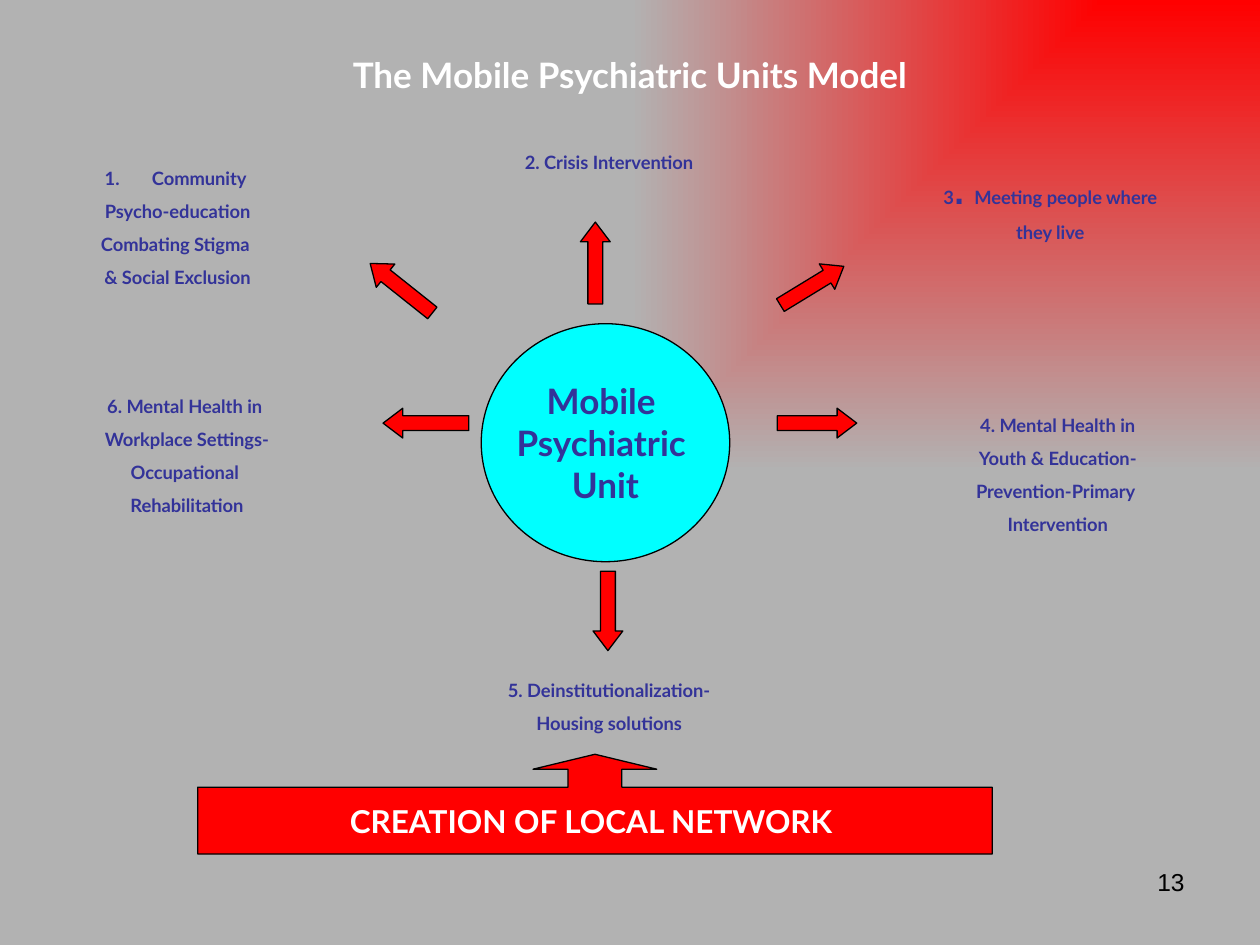
import pptx
import pptx.util
import pptx.dml.color
import pptx.enum.shapes
import pptx.enum.text
import pptx.oxml
import pptx.oxml.ns

Pt = pptx.util.Pt
SHAPES = pptx.enum.shapes.MSO_SHAPE
ALIGN = pptx.enum.text.PP_ALIGN
ANCHOR = pptx.enum.text.MSO_ANCHOR
FIT = pptx.enum.text.MSO_AUTO_SIZE

RED, GREY, CYAN, NAVY = "FF0000", "B2B2B2", "00FFFF", "333399"
WHITE, BLACK = "FFFFFF", "000000"
LABEL = {"name": "Lato", "size": Pt(10.5), "bold": True}
HEADING = {"name": "Lato", "size": Pt(20), "bold": True}
BANNER = {"name": "Lato", "size": Pt(18), "bold": True}
NUMBER = {"name": "Arial", "size": Pt(14), "bold": False}
POINT = {"name": "DejaVu Sans", "size": Pt(16), "bold": True}
INDENT = Pt(27)
ARROW_HEIGHT = 17

# Arrow: left, top, width, rotation. Label: box, wrap, line spacing, lines.
SPOKES = [
    ((206.6, 156.2, 45.4, 218.5), (20.9, 85.7, 161.3, 83.5), True, 1.5,
     ["Community ", "Psycho-education", "Combating Stigma ", "& Social Exclusion"]),
    ((316.8, 141.8, 46.8, 270), (284.4, 82.8, 127.4, 20.2), False, 1,
     ["2. Crisis Intervention"]),
    ((442.8, 154.8, 42.5, 328.6), (524.2, 87.8, 151.9, 55.4), True, 1.5,
     [[("3", LABEL), (". ", POINT), ("Meeting people where", LABEL)], "they live"]),
    ((444.2, 233.3, 45.4, 0), (543.6, 226.8, 121.7, 80.6), False, 1.5,
     ["4. Mental Health in", "Youth & Education-", "Prevention-Primary ", "Intervention"]),
    ((324.7, 340.6, 45.4, 90), (274.3, 378, 147.6, 43.2), False, 1.5,
     ["5. Deinstitutionalization-", "Housing solutions"]),
    ((218.9, 233.3, 49, 180), (0, 216, 213.8, 80.6), True, 1.5,
     ["6. Mental Health in ", "Workplace Settings-", "Occupational ", "Rehabilitation"]),
]


def rgb(value):
    return pptx.dml.color.RGBColor.from_string(value)


def xml(tag, content="", attributes=""):
    namespace = pptx.oxml.ns.nsdecls("a", "p")
    return pptx.oxml.parse_xml(f"<{tag} {namespace} {attributes}>{content}</{tag}>")


def write(frame, lines, style, color, align=ALIGN.CENTER, spacing=None):
    """Fill a frame; a line is a string or a list of (text, style) spans."""
    for index, line in enumerate(lines):
        para = frame.paragraphs[0] if index == 0 else frame.add_paragraph()
        para.alignment = align
        if spacing:
            para.line_spacing = spacing
        for text, values in [(line, style)] if isinstance(line, str) else line:
            span = para.add_run()
            span.text = text
            span.font.color.rgb = rgb(color)
            for name, value in values.items():
                setattr(span.font, name, value)


def add_text(parent, box, lines, style, color, wrap=True, **options):
    frame = parent.add_textbox(*map(Pt, box)).text_frame
    frame.word_wrap = wrap
    write(frame, lines, style, color, **options)
    return frame


def add_solid(parent, kind, box, fill, adjustments=()):
    shape = parent.add_shape(kind, *map(Pt, box))
    shape.shadow.inherit = False
    shape.fill.solid()
    shape.fill.fore_color.rgb = rgb(fill)
    shape.line.color.rgb = rgb(BLACK)
    shape.line.width = Pt(0.75)
    for index, value in enumerate(adjustments):
        shape.adjustments[index] = value
    return shape


def add_caption(shape, lines, style, color):
    frame = shape.text_frame
    frame.word_wrap = False
    frame.vertical_anchor = ANCHOR.MIDDLE
    write(frame, lines, style, color)


def paint_background(page):
    """Red glow from the top right corner."""
    stops = "".join(f'<a:gs pos="{position}"><a:srgbClr val="{color}"/></a:gs>'
                    for position, color in ((0, RED), (100000, GREY)))
    gradient = (f'<a:gradFill rotWithShape="0"><a:gsLst>{stops}</a:gsLst>'
                '<a:path path="rect"><a:fillToRect l="100000" b="100000"/></a:path>'
                '</a:gradFill><a:effectLst/>')
    page.element.cSld.insert(0, xml("p:bg", f"<p:bgPr>{gradient}</p:bgPr>"))


def add_spoke(page, arrow, box, wrap, spacing, lines, numbered):
    """An arrow away from the hub, grouped with its label."""
    group = page.shapes.add_group_shape().shapes
    left, top, width, rotation = arrow
    pointer = add_solid(group, SHAPES.RIGHT_ARROW,
                        (left, top, width, ARROW_HEIGHT), RED, (0.5, 0.66))
    pointer.rotation = rotation
    frame = add_text(group, box, lines, LABEL, NAVY, wrap, spacing=spacing)
    frame.auto_size = FIT.SHAPE_TO_FIT_TEXT
    for index, para in enumerate(frame.paragraphs):
        properties = para._p.get_or_add_pPr()
        properties.set("marL", str(INDENT))
        properties.set("indent", str(-INDENT))
        bullet = (xml("a:buAutoNum", attributes='type="arabicPeriod"')
                  if numbered and index == 0 else xml("a:buNone"))
        properties.append(bullet)


def add_hub(page, box):
    hub = add_solid(page.shapes, SHAPES.OVAL, box, CYAN)
    add_caption(hub, ["Mobile ", "Psychiatric ", "Unit"], HEADING, NAVY)


def add_banner(page, box):
    banner = add_solid(page.shapes, SHAPES.UP_ARROW_CALLOUT, box, RED,
                       (0.54, 0.62, 0.15, 0.67))
    add_caption(banner, ["CREATION OF LOCAL NETWORK "], BANNER, WHITE)


def main():
    deck = pptx.Presentation()
    deck.slide_width, deck.slide_height = Pt(720), Pt(540)
    page = deck.slides.add_slide(deck.slide_layouts[6])
    paint_background(page)

    # Page number and title
    add_text(page.shapes, (516, 492, 168, 37.5), ["13"], NUMBER, BLACK, align=ALIGN.RIGHT)
    title = add_text(page.shapes, (159, 3.6, 402, 77.8),
                     ["The Mobile Psychiatric Units Model"], HEADING, WHITE)
    title.vertical_anchor = ANCHOR.MIDDLE

    # Hub, its spokes and the base
    add_hub(page, (275, 185, 142, 136))
    for index, spoke in enumerate(SPOKES):
        add_spoke(page, *spoke, numbered=index == 0)
    add_banner(page, (113, 431, 454, 57))
    deck.save("out.pptx")


if __name__ == "__main__":
    main()
